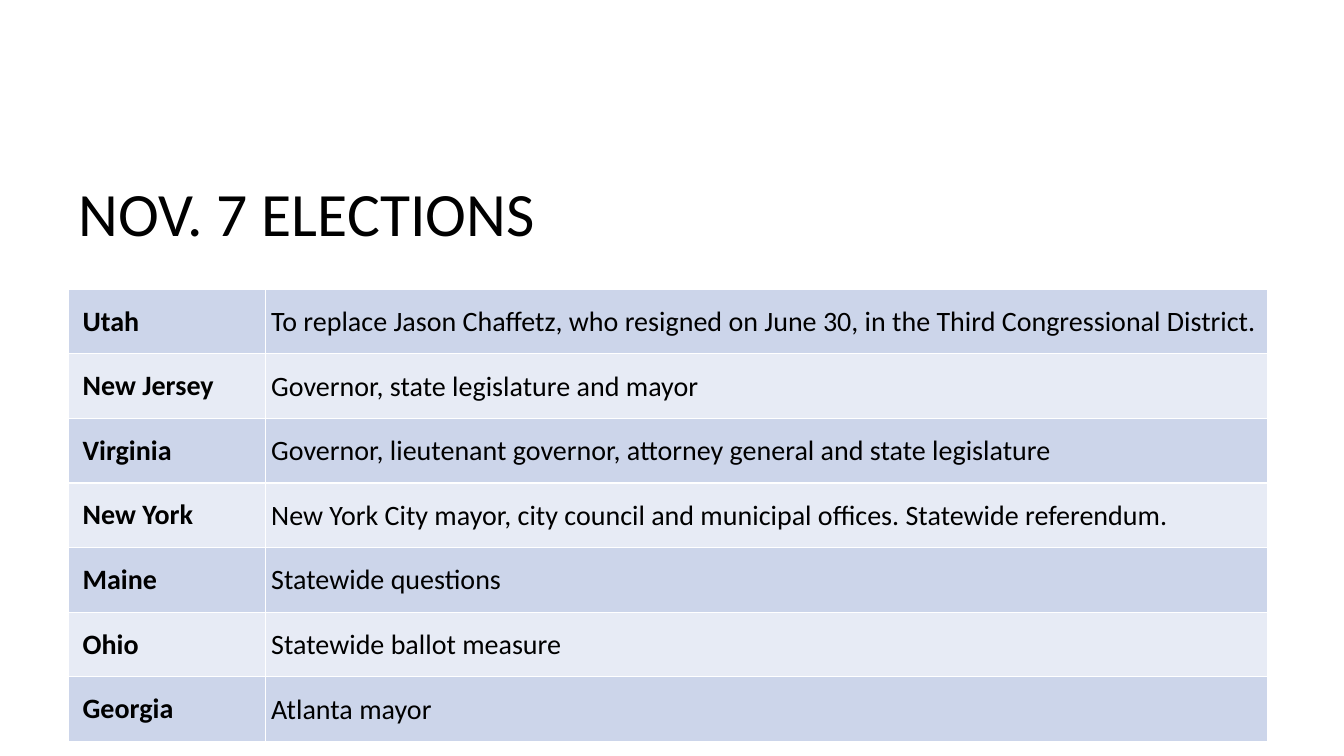
from typing import NamedTuple

from lxml.etree import SubElement
from pptx import Presentation
from pptx.dml.color import RGBColor
from pptx.enum.text import MSO_ANCHOR, PP_ALIGN
from pptx.oxml.ns import qn
from pptx.util import Inches, Pt


class Race(NamedTuple):
    state: str
    seats: str


class Style(NamedTuple):
    width: float
    left: float
    right: float
    top: float
    base: float
    bold: bool


RACES = [
    Race("Utah", "To replace Jason Chaffetz, who resigned on June 30, "
                 "in the Third Congressional District."),
    Race("New Jersey", "Governor, state legislature and mayor"),
    Race("Virginia", "Governor, lieutenant governor, attorney general "
                     "and state legislature"),
    Race("New York", "New York City mayor, city council and municipal "
                     "offices. Statewide referendum."),
    Race("Maine", "Statewide questions"),
    Race("Ohio", "Statewide ballot measure"),
    Race("Georgia", "Atlanta mayor"),
]
STYLES = [
    Style(1.95, 0.14, 0.14, 0.15, 0.15, True),
    Style(9.94, 0.06, 0, 0.01, 0, False),
]
BANDS = ["CCD5EA", "E7EBF5"]
LEFT, TOP, ROW = 0.68, 2.87, 0.63


def paint(fmt, code: str) -> None:
    """Give a fill a solid colour."""
    fmt.solid()
    fmt.fore_color.rgb = RGBColor.from_string(code)


def set_font(font, size: int, bold: bool = False) -> None:
    font.name = "Calibri"
    font.size = Pt(size)
    font.bold = bold
    paint(font.fill, "000000")


def add_edges(cell, code: str) -> None:
    """Draw a thin line on all four sides, ahead of the cell fill."""
    props = cell._tc.get_or_add_tcPr()
    for side in ("lnL", "lnR", "lnT", "lnB"):
        line = SubElement(props, qn(f"a:{side}"), w=str(Pt(1)))
        fill = SubElement(line, qn("a:solidFill"))
        SubElement(fill, qn("a:srgbClr"), val=code)


def fill_cell(cell, text: str, style: Style, band: str) -> None:
    add_edges(cell, "FFFFFF")
    paint(cell.fill, band)
    cell.vertical_anchor = MSO_ANCHOR.MIDDLE
    cell.margin_left = Inches(style.left)
    cell.margin_right = Inches(style.right)
    cell.margin_top = Inches(style.top)
    cell.margin_bottom = Inches(style.base)
    cell.text_frame.text = text
    set_font(cell.text_frame.paragraphs[0].runs[0].font, 20, style.bold)


def add_title(slide, text: str) -> None:
    title = slide.shapes.title
    title.left, title.top = Inches(LEFT), Inches(1.42)
    title.width, title.height = Inches(10.41), Inches(1.45)
    frame = title.text_frame
    frame.text = text
    frame.word_wrap = True
    frame.vertical_anchor = MSO_ANCHOR.MIDDLE
    para = frame.paragraphs[0]
    para.alignment = PP_ALIGN.LEFT
    para.line_spacing = 0.9
    set_font(para.runs[0].font, 44)


def add_races(slide) -> None:
    width = sum(style.width for style in STYLES)
    table = slide.shapes.add_table(
        len(RACES), len(STYLES), Inches(LEFT), Inches(TOP),
        Inches(width), Inches(ROW * len(RACES))).table
    table.first_row = False
    for col, style in zip(table.columns, STYLES):
        col.width = Inches(style.width)
    for i, race in enumerate(RACES):
        table.rows[i].height = Inches(ROW)
        for j, (text, style) in enumerate(zip(race, STYLES)):
            fill_cell(table.cell(i, j), text, style, BANDS[i % 2])


def main() -> None:
    deck = Presentation()
    deck.slide_width, deck.slide_height = Inches(13.33), Inches(7.5)
    slide = deck.slides.add_slide(deck.slide_layouts[5])
    paint(slide.background.fill, "FFFFFF")
    # Heading
    add_title(slide, "NOV. 7 ELECTIONS")
    # States and their races
    add_races(slide)
    deck.save("out.pptx")


if __name__ == "__main__":
    main()
